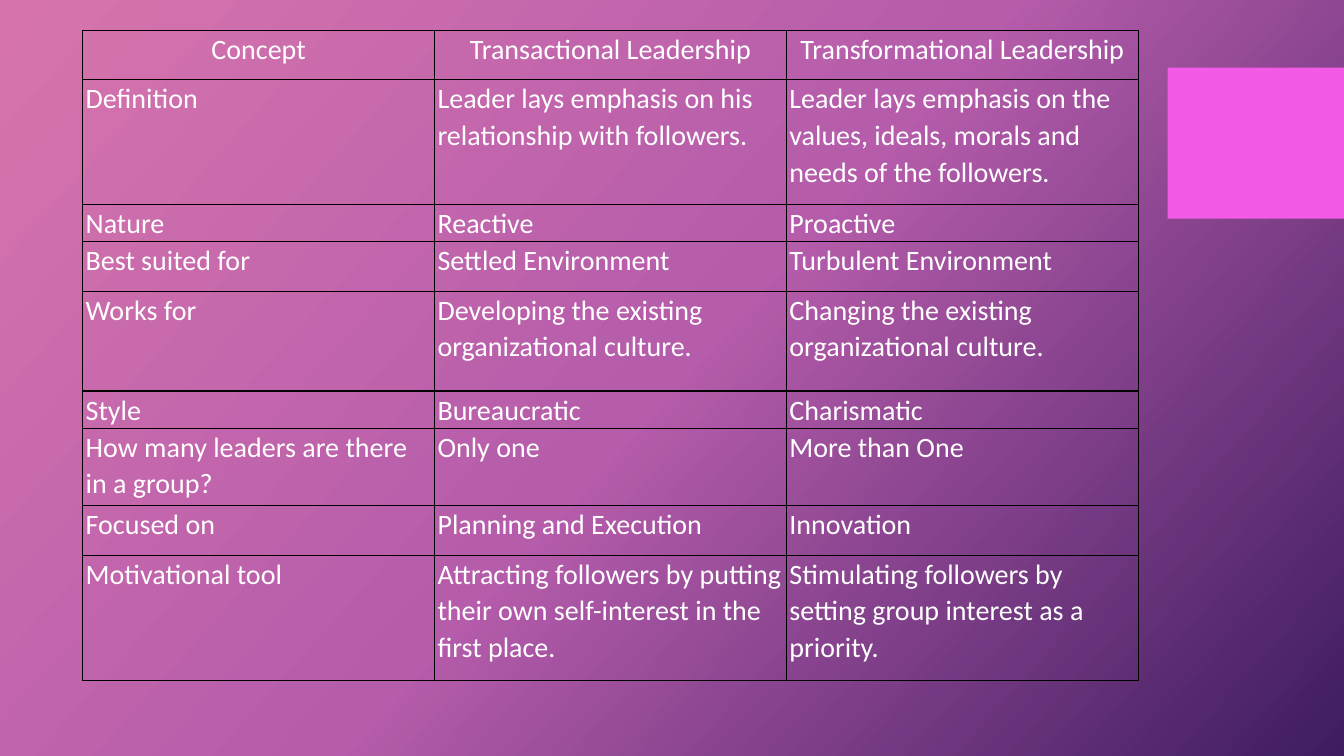
from copy import deepcopy

from lxml.etree import SubElement
from pptx import Presentation
from pptx.dml.color import RGBColor
from pptx.enum.shapes import MSO_SHAPE as Shape
from pptx.enum.text import PP_ALIGN as Align
from pptx.oxml.ns import qn
from pptx.util import Inches, Pt

PINK = RGBColor(0xD7, 0x74, 0xAD)
ORCHID = RGBColor(0xB5, 0x5C, 0xAB)
PURPLE = RGBColor(0x3E, 0x1C, 0x5F)
ACCENT = RGBColor(0xF3, 0x5A, 0xE6)
WHITE = RGBColor(0xFF, 0xFF, 0xFF)
BLACK = RGBColor(0x00, 0x00, 0x00)

ROWS = [
    (0.49, "Concept", "Transactional Leadership", "Transformational Leadership"),
    (1.24, "Definition",
     "Leader lays emphasis on his relationship with followers.",
     "Leader lays emphasis on the values, ideals, morals and needs of the followers."),
    (0.37, "Nature", "Reactive", "Proactive"),
    (0.49, "Best suited for", "Settled Environment", "Turbulent Environment"),
    (0.99, "Works for",
     "Developing the existing organizational culture.",
     "Changing the existing organizational culture."),
    (0.37, "Style", "Bureaucratic", "Charismatic"),
    (0.77, "How many leaders are there in a group?", "Only one", "More than One"),
    (0.49, "Focused on", "Planning and Execution", "Innovation"),
    (1.24, "Motivational tool",
     "Attracting followers by putting their own self-interest in the first place.",
     "Stimulating followers by setting group interest as a priority."),
]


def add_borders(cell):
    props = cell._tc.get_or_add_tcPr()
    for i, side in enumerate(("a:lnL", "a:lnR", "a:lnT", "a:lnB")):
        line = SubElement(props, qn(side), w=str(Pt(1)))
        fill = SubElement(line, qn("a:solidFill"))
        SubElement(fill, qn("a:srgbClr"), val=str(BLACK))
        props.insert(i, line)


prs = Presentation()
prs.slide_width, prs.slide_height = Inches(13.33), Inches(7.5)
slide = prs.slides.add_slide(prs.slide_layouts[6])

# Background: three-stop gradient, angle counted counterclockwise
back = slide.background.fill
back.gradient()
back.gradient_angle = 360 - 42
stops = slide.element.find(".//" + qn("a:gsLst"))
stops.insert(1, deepcopy(stops[0]))
for stop, spot, color in zip(back.gradient_stops, (0, 0.5, 1), (PINK, ORCHID, PURPLE)):
    stop.position = spot
    stop.color.rgb = color

# Accent block at the right edge
block = slide.shapes.add_shape(
    Shape.RECTANGLE, Inches(11.58), Inches(0.67), Inches(1.75), Inches(1.5))
block.shadow.inherit = False
block.fill.solid()
block.fill.fore_color.rgb = ACCENT
block.line.fill.background()

# Comparison table
height = sum(row[0] for row in ROWS)
table = slide.shapes.add_table(
    len(ROWS), 3, Inches(0.82), Inches(0.3), Inches(10.47), Inches(height)).table
table.horz_banding = False
table.first_row = False
for col in table.columns:
    col.width = Inches(3.49)

for r, (tall, *texts) in enumerate(ROWS):
    table.rows[r].height = Inches(tall)
    for c, text in enumerate(texts):
        cell = table.cell(r, c)
        cell.margin_left = cell.margin_right = Inches(0.03)
        cell.margin_top = cell.margin_bottom = 0
        cell.fill.background()
        add_borders(cell)
        cell.text = text
        para = cell.text_frame.paragraphs[0]
        para.alignment = Align.LEFT if r else Align.CENTER
        para.line_spacing = 1.07
        para.font.name = "Calibri"
        para.font.size = Pt(20)
        para.font.bold = False
        para.font.color.rgb = WHITE

prs.save("out.pptx")
